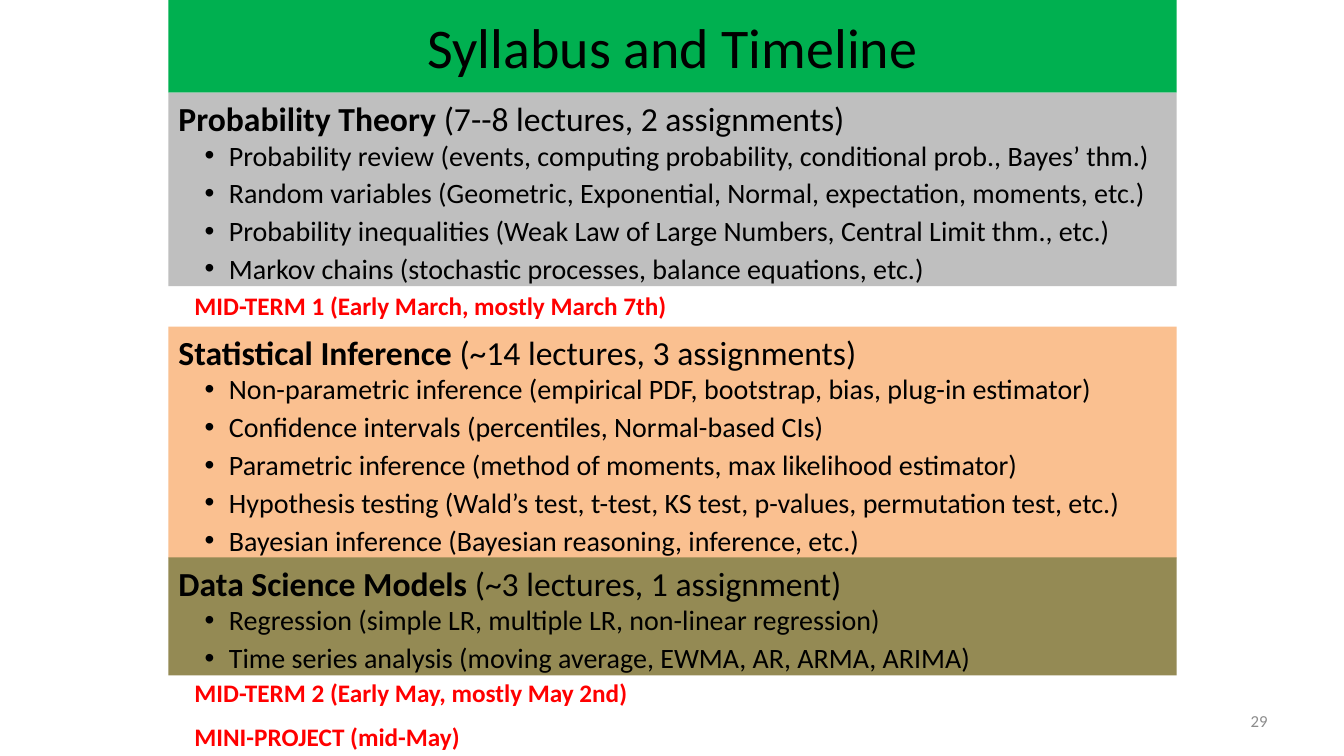
from lxml.etree import SubElement
from pptx import Presentation
from pptx.dml.color import RGBColor
from pptx.enum.text import MSO_ANCHOR as Anchor, MSO_AUTO_SIZE as AutoSize, PP_ALIGN as Align
from pptx.oxml.ns import qn
from pptx.util import Inches, Pt

BLACK = RGBColor(0x00, 0x00, 0x00)
RED = RGBColor(0xFF, 0x00, 0x00)
GREEN = RGBColor(0x00, 0xB0, 0x50)
SILVER = RGBColor(0xBF, 0xBF, 0xBF)
PEACH = RGBColor(0xFA, 0xC0, 0x90)
OLIVE = RGBColor(0x94, 0x8A, 0x54)
PAGE_GRAY = RGBColor(0x8C, 0x8C, 0x8C)

LEFT, WIDTH = 1.67, 10

# placeholder index, top, height, fill, topic, workload, lessons
SECTIONS = [
    (1, 0.92, 1.92, SILVER, "Probability Theory", " (7--8 lectures, 2 assignments)", [
        "Probability review (events, computing probability, conditional prob., Bayes’ thm.)",
        "Random variables (Geometric, Exponential, Normal, expectation, moments, etc.)",
        "Probability inequalities (Weak Law of Large Numbers, Central Limit thm., etc.)",
        "Markov chains (stochastic processes, balance equations, etc.)",
    ]),
    (2, 3.24, 2.3, PEACH, "Statistical Inference", " (~14 lectures, 3 assignments)", [
        "Non-parametric inference (empirical PDF, bootstrap, bias, plug-in estimator)",
        "Confidence intervals (percentiles, Normal-based CIs)",
        "Parametric inference (method of moments, max likelihood estimator)",
        "Hypothesis testing (Wald’s test, t-test, KS test, p-values, permutation test, etc.)",
        "Bayesian inference (Bayesian reasoning, inference, etc.)",
    ]),
    (4, 5.53, 1.17, OLIVE, "Data Science Models", " (~3 lectures, 1 assignment)", [
        "Regression (simple LR, multiple LR, non-linear regression)",
        "Time series analysis (moving average, EWMA, AR, ARMA, ARIMA)",
    ]),
]

MILESTONES = [
    (2.83, 6.25, "MID-TERM 1 (Early March, mostly March 7th)"),
    (6.67, 5.25, "MID-TERM 2 (Early May, mostly May 2nd)"),
    (7.11, 4.42, "MINI-PROJECT (mid-May)"),
]


def write(paragraph, text, size, color=BLACK, bold=False, font="Calibri"):
    run = paragraph.add_run()
    run.text = text
    run.font.name, run.font.size, run.font.bold = font, Pt(size), bold
    run.font.color.rgb = color


def set_marker(paragraph, bulleted):
    """Give the paragraph a hanging bullet with its tab stop, or none at all."""
    props = paragraph._p.get_or_add_pPr()
    margin, indent = (0.5, -0.24) if bulleted else (0, 0)
    props.set("marL", str(Inches(margin)))
    props.set("indent", str(Inches(indent)))
    if bulleted:
        SubElement(props, qn("a:buFont"), typeface="Arial")
        SubElement(props, qn("a:buChar"), char="•")
        tabs = SubElement(props, qn("a:tabLst"))
        SubElement(tabs, qn("a:tab"), pos=str(Inches(margin)), algn="l")
    else:
        SubElement(props, qn("a:buNone"))


class SyllabusSlide:
    def __init__(self, deck):
        self.slide = deck.slides.add_slide(deck.slide_layouts.get_by_name("Comparison"))
        self.holders = {holder.placeholder_format.idx: holder
                        for holder in self.slide.placeholders}

    def band(self, idx, top, height, fill, anchor):
        """Turn a placeholder into a full-width coloured band; return its text frame."""
        holder = self.holders.pop(idx)
        holder.left, holder.top = Inches(LEFT), Inches(top)
        holder.width, holder.height = Inches(WIDTH), Inches(height)
        holder.fill.solid()
        holder.fill.fore_color.rgb = fill
        frame = holder.text_frame
        frame.word_wrap, frame.auto_size = True, AutoSize.NONE
        frame.vertical_anchor = anchor
        return frame

    def title(self, text):
        heading = self.band(0, 0, 0.92, GREEN, Anchor.MIDDLE).paragraphs[0]
        heading.alignment = Align.CENTER
        write(heading, text, 40)

    def section(self, idx, top, height, fill, topic, workload, lessons):
        frame = self.band(idx, top, height, fill, Anchor.TOP)
        heading = frame.paragraphs[0]
        set_marker(heading, bulleted=False)
        heading.space_before = Pt(0)
        write(heading, topic, 24, bold=True)
        write(heading, workload, 24)
        for lesson in lessons:
            item = frame.add_paragraph()
            item.level = 1
            set_marker(item, bulleted=True)
            item.space_before, item.space_after = Pt(0), Pt(3)
            write(item, lesson, 20)

    def label(self, left, top, width, text, size, align=Align.LEFT,
              anchor=Anchor.TOP, **style):
        box = self.slide.shapes.add_textbox(
            Inches(left), Inches(top), Inches(width), Inches(0.4))
        frame = box.text_frame
        frame.word_wrap, frame.vertical_anchor = True, anchor
        frame.paragraphs[0].alignment = align
        write(frame.paragraphs[0], text, size, **style)

    def drop_unused(self):
        for holder in self.holders.values():
            holder.element.getparent().remove(holder.element)


def main():
    deck = Presentation()
    deck.slide_width, deck.slide_height = Inches(13.33), Inches(7.5)
    syllabus = SyllabusSlide(deck)
    syllabus.title("Syllabus and Timeline")
    for section in SECTIONS:
        syllabus.section(*section)
    for top, width, milestone in MILESTONES:
        syllabus.label(1.83, top, width, milestone, 18, color=RED, bold=True)
    syllabus.label(9.56, 6.95, 3.11, "29", 12, align=Align.RIGHT,
                   anchor=Anchor.MIDDLE, color=PAGE_GRAY)
    syllabus.drop_unused()
    deck.save("out.pptx")


if __name__ == "__main__":
    main()
